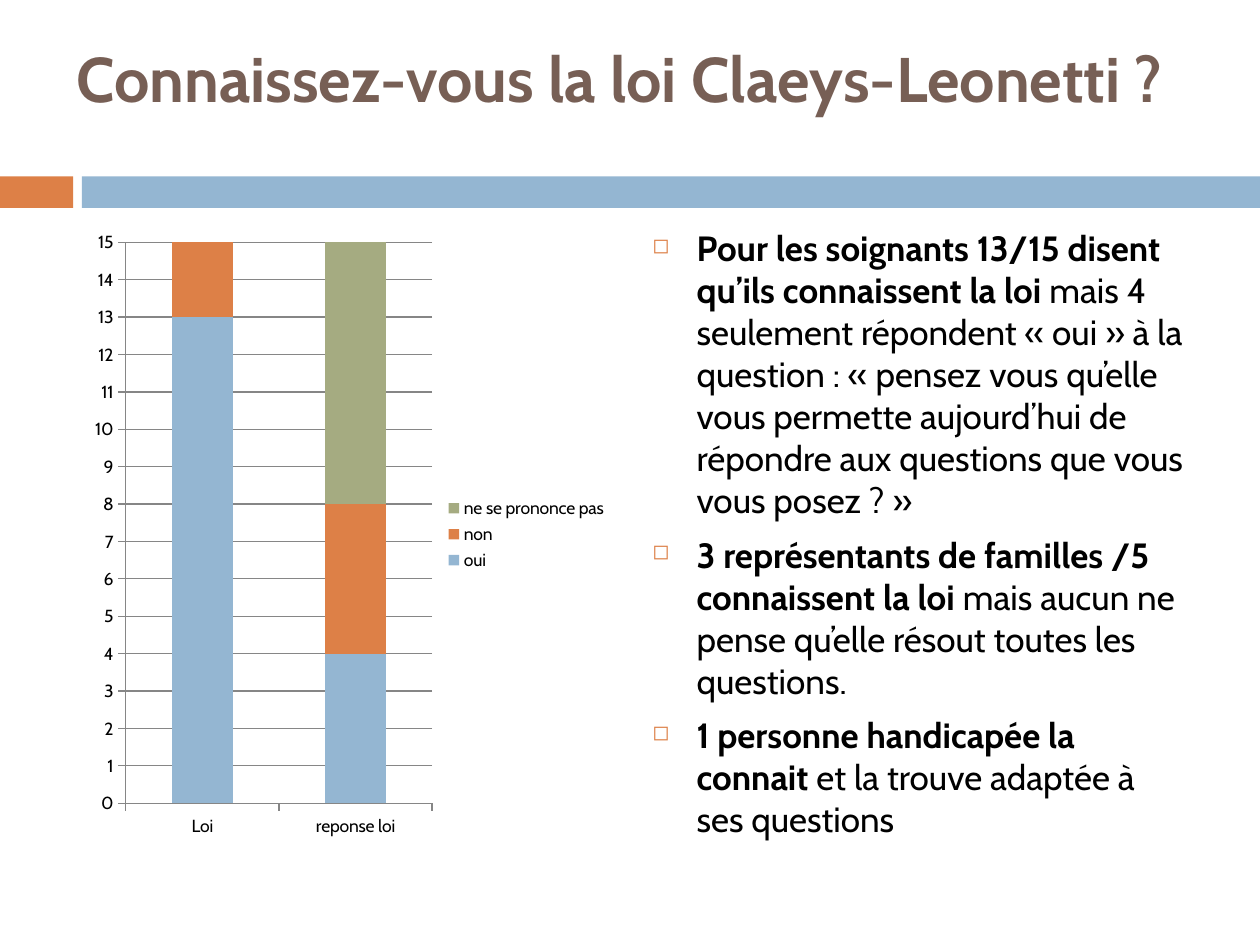
import pptx
import pptx.chart.data
import pptx.dml.color
import pptx.enum.chart
import pptx.enum.shapes
import pptx.enum.text
import pptx.oxml
import pptx.oxml.ns
import pptx.util
from pptx.util import Inches

FONT = "Cabin"
HUES = {"blue": "94B6D2", "orange": "DD8047", "green": "A5AB81",
        "brown": "775F55", "black": "000000", "grey": "868686"}


def tint(name):
    return pptx.dml.color.RGBColor.from_string(HUES[name])


def write(par, text, size=20, hue="black", bold=False):
    run = par.add_run()
    run.text = text
    run.font.name = FONT
    run.font.size = pptx.util.Pt(size)
    run.font.bold = bold
    run.font.color.rgb = tint(hue)


deck = pptx.Presentation()
deck.slide_width, deck.slide_height = Inches(10), Inches(7.5)
slide = deck.slides.add_slide(deck.slide_layouts[6])

# Band under the title
for left, width, hue in [(0, 0.58, "orange"), (0.65, 9.35, "blue")]:
    bar = slide.shapes.add_shape(
        pptx.enum.shapes.MSO_SHAPE.RECTANGLE,
        Inches(left), Inches(1.4), Inches(width), Inches(0.25))
    bar.shadow.inherit = False
    bar.fill.solid()
    bar.fill.fore_color.rgb = tint(hue)
    bar.line.fill.background()

# Title
title = slide.shapes.add_textbox(
    Inches(0.51), Inches(0.29), Inches(9), Inches(1.25)).text_frame
title.word_wrap = True
title.margin_top = Inches(0.02)
title.vertical_anchor = pptx.enum.text.MSO_ANCHOR.TOP
write(title.paragraphs[0], "Connaissez-vous la loi Claeys-Leonetti ?",
      size=36, hue="brown", bold=True)

# Stacked column chart
data = pptx.chart.data.CategoryChartData()
data.categories = ["Loi", "reponse loi"]
data.add_series("oui", [13, 4])
data.add_series("non", [2, 4])
data.add_series("ne se prononce pas", [0, 7])
chart = slide.shapes.add_chart(
    pptx.enum.chart.XL_CHART_TYPE.COLUMN_STACKED,
    Inches(0.67), Inches(1.74), Inches(4.25), Inches(5), data).chart
chart.has_title = False
chart.font.name = FONT
chart.font.size = pptx.util.Pt(10)
chart.font.color.rgb = tint("black")
chart.has_legend = True
chart.legend.position = pptx.enum.chart.XL_LEGEND_POSITION.RIGHT
chart.legend.include_in_layout = False

plot = chart.plots[0]
plot.vary_by_categories = False
plot.gap_width, plot.overlap = 150, 100
for series, hue in zip(plot.series, ["blue", "orange", "green"]):
    series.format.fill.solid()
    series.format.fill.fore_color.rgb = tint(hue)

# Axes and grid
scale = chart.value_axis
scale.minimum_scale, scale.maximum_scale, scale.major_unit = 0, 15, 1
scale.has_major_gridlines = True
for axis in (scale, chart.category_axis):
    axis.major_tick_mark = pptx.enum.chart.XL_TICK_MARK.OUTSIDE
for part in (scale, chart.category_axis, scale.major_gridlines):
    part.format.line.color.rgb = tint("grey")
    part.format.line.width = pptx.util.Pt(0.75)

# Bulleted findings: bold lead, then plain rest
items = [
    ("Pour les soignants 13/15 disent qu’ils connaissent la loi ",
     "mais 4 seulement répondent « oui » à la question : « pensez vous "
     "qu’elle vous permette aujourd’hui de répondre aux questions que vous "
     "vous posez ? »"),
    ("3 représentants de familles /5 connaissent la loi ",
     "mais aucun ne pense qu’elle résout toutes les questions."),
    ("1 personne handicapée la connait ",
     "et la trouve adaptée à ses questions"),
]
body = slide.shapes.add_textbox(
    Inches(5.08), Inches(1.75), Inches(4.42), Inches(5.23)).text_frame
body.word_wrap = True
space = pptx.oxml.ns.nsdecls("a")
marks = [f'<a:buClr {space}><a:srgbClr val="{HUES["orange"]}"/></a:buClr>',
         f'<a:buSzPct {space} val="60000"/>',
         f'<a:buChar {space} char="◻"/>']
for i, (lead, rest) in enumerate(items):
    par = body.add_paragraph() if i else body.paragraphs[0]
    par.space_before = pptx.util.Pt(7)
    props = par._p.get_or_add_pPr()
    props.set("marL", str(Inches(0.35)))
    props.set("indent", str(-Inches(0.35)))
    for mark in marks:
        props.append(pptx.oxml.parse_xml(mark))
    write(par, lead, bold=True)
    write(par, rest)

deck.save("out.pptx")
